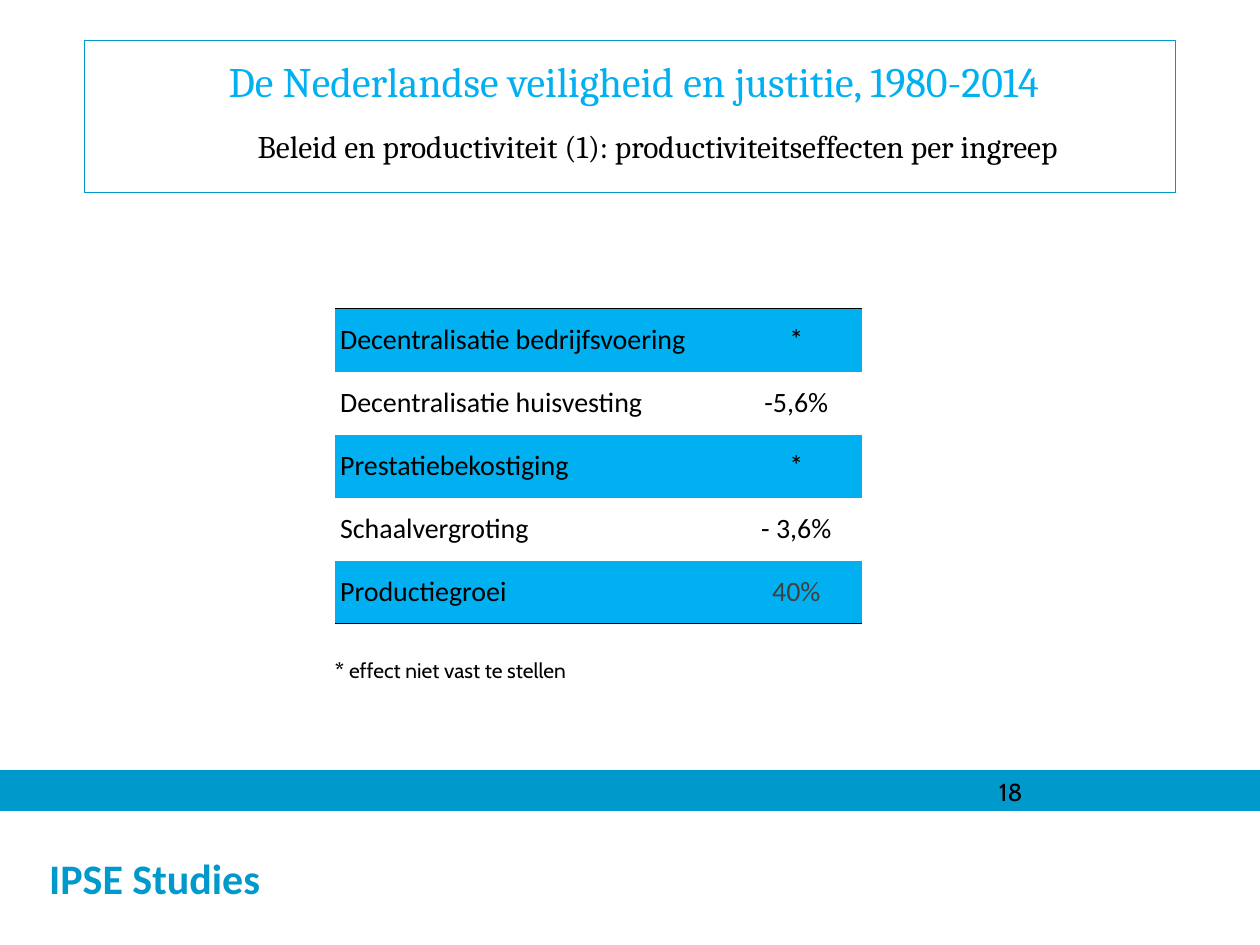
"""Build the slide on productivity effects per policy measure."""
from dataclasses import dataclass

from lxml import etree
from pptx import Presentation
from pptx.dml.color import RGBColor
from pptx.enum.shapes import MSO_SHAPE
from pptx.enum.text import MSO_ANCHOR, MSO_AUTO_SIZE, PP_ALIGN
from pptx.oxml.ns import qn
from pptx.util import Inches, Pt

RECTANGLE = MSO_SHAPE.RECTANGLE
TOP, MIDDLE = MSO_ANCHOR.TOP, MSO_ANCHOR.MIDDLE
LEFT, CENTER = PP_ALIGN.LEFT, PP_ALIGN.CENTER
NO_AUTOFIT = MSO_AUTO_SIZE.NONE

BLACK = RGBColor(0x00, 0x00, 0x00)
WHITE = RGBColor(0xFF, 0xFF, 0xFF)
GRAY = RGBColor(0x40, 0x40, 0x40)
SKY = RGBColor(0x00, 0xB0, 0xF0)
BRAND_BLUE = RGBColor(0x00, 0x99, 0xCC)
PLAIN_TABLE_STYLE = "{2D5ABB26-0587-4C30-8999-92F81FD0307C}"


@dataclass
class Style:
    font: str
    size: float
    color: RGBColor = BLACK
    bold: bool = False


@dataclass
class Effect:
    measure: str
    value: str
    value_color: RGBColor = BLACK


@dataclass
class Heading:
    style: Style
    indent: float
    space_before: float


EFFECTS = [
    Effect("Decentralisatie bedrijfsvoering", "*"),
    Effect("Decentralisatie huisvesting", "-5,6%"),
    Effect("Prestatiebekostiging", "*"),
    Effect("Schaalvergroting", "- 3,6%"),
    Effect("Productiegroei", "40%", GRAY),
]
HEADINGS = [
    Heading(Style("Cambria", 24, SKY), 0.06, 0),
    Heading(Style("Cambria", 18), 0.44, 12),
]


def format_runs(paragraph, style: Style) -> None:
    for run in paragraph.runs:
        run.font.name = style.font
        run.font.size = Pt(style.size)
        run.font.bold = style.bold
        run.font.color.rgb = style.color


def place(shape, left: float, top: float, width: float, height: float) -> None:
    shape.left, shape.top = Inches(left), Inches(top)
    shape.width, shape.height = Inches(width), Inches(height)


def add_band(slide, left: float, top: float, width: float, height: float, color: RGBColor):
    band = slide.shapes.add_shape(
        RECTANGLE, Inches(left), Inches(top), Inches(width), Inches(height))
    band.shadow.inherit = False
    band.fill.solid()
    band.fill.fore_color.rgb = color
    band.line.fill.background()
    return band


def add_text(slide, left: float, top: float, width: float, height: float,
             text: str, style: Style):
    box = slide.shapes.add_textbox(
        Inches(left), Inches(top), Inches(width), Inches(height))
    box.text_frame.word_wrap = True
    box.text_frame.text = text
    format_runs(box.text_frame.paragraphs[0], style)
    return box


def add_footer(slide) -> None:
    footer = add_band(slide, -0.01, 6.44, 10.01, 1.06, WHITE)
    frame = footer.text_frame
    frame.text = "IPSE Studies"
    frame.word_wrap = False
    frame.vertical_anchor = MIDDLE
    frame.margin_left = Inches(0.4)
    frame.paragraphs[0].alignment = LEFT
    format_runs(frame.paragraphs[0], Style("Calibri", 24, BRAND_BLUE, True))

    stripe = add_band(slide, 0, 6.12, 10, 0.31, BRAND_BLUE)
    stripe.line.color.rgb = BRAND_BLUE
    stripe.line.width = Pt(0.75)
    add_text(slide, 7.83, 6.12, 2.08, 0.25, "18", Style("Cabin", 14))


def fill_title(title) -> None:
    place(title, 0.67, 0.32, 8.66, 1.21)
    title.line.color.rgb = BRAND_BLUE
    title.line.width = Pt(0.75)
    frame = title.text_frame
    frame.text = ("De Nederlandse veiligheid en justitie, 1980-2014\n"
                  "Beleid en productiviteit (1): productiviteitseffecten per ingreep")
    frame.auto_size = NO_AUTOFIT
    frame.vertical_anchor = TOP
    frame.margin_top = Inches(0.12)
    for paragraph, heading in zip(frame.paragraphs, HEADINGS):
        paragraph.alignment = CENTER
        paragraph.space_before = Pt(heading.space_before)
        paragraph._p.get_or_add_pPr().set("marL", str(Inches(heading.indent)))
        format_runs(paragraph, heading.style)


def add_border(cell, side: str) -> None:
    border = etree.Element(qn(f"a:{side}"), w=str(Pt(1)))
    fill = etree.SubElement(border, qn("a:solidFill"))
    etree.SubElement(fill, qn("a:srgbClr"), val=str(BLACK))
    cell._tc.get_or_add_tcPr().insert(0, border)


def fill_cell(cell, text: str, align: PP_ALIGN, color: RGBColor, shaded: bool) -> None:
    cell.text_frame.text = text
    cell.vertical_anchor = MIDDLE
    cell.margin_left = cell.margin_right = Inches(0.04)
    cell.margin_top = cell.margin_bottom = 0
    paragraph = cell.text_frame.paragraphs[0]
    paragraph.alignment = align
    format_runs(paragraph, Style("Calibri", 16, color))
    if shaded:
        cell.fill.solid()
        cell.fill.fore_color.rgb = SKY
    else:
        cell.fill.background()


def add_effects_table(slide) -> None:
    table = slide.shapes.add_table(
        len(EFFECTS), 2, Inches(2.66), Inches(2.45),
        Inches(4.18), Inches(0.5 * len(EFFECTS))).table
    table.first_row = table.horz_banding = False
    table._tbl.tblPr.find(qn("a:tableStyleId")).text = PLAIN_TABLE_STYLE
    for column, width in zip(table.columns, (3.14, 1.04)):
        column.width = Inches(width)
    for row, effect in enumerate(EFFECTS):
        shaded = row % 2 == 0
        fill_cell(table.cell(row, 0), effect.measure, LEFT, BLACK, shaded)
        fill_cell(table.cell(row, 1), effect.value, CENTER, effect.value_color, shaded)
    for column in range(2):
        add_border(table.cell(0, column), "lnT")
        add_border(table.cell(len(EFFECTS) - 1, column), "lnB")


def main() -> None:
    presentation = Presentation()
    presentation.slide_width = Inches(10)
    presentation.slide_height = Inches(7.5)
    slide = presentation.slides.add_slide(presentation.slide_layouts[5])
    add_footer(slide)
    note = add_text(slide, 2.56, 5.17, 2.49, 0.3, "*", Style("Cabin", 12, bold=True))
    explanation = note.text_frame.paragraphs[0].add_run()
    explanation.text = " effect niet vast te stellen"
    explanation.font.name = "Cabin"
    explanation.font.size = Pt(12)
    explanation.font.color.rgb = BLACK
    fill_title(slide.shapes.title)
    add_effects_table(slide)
    presentation.save("out.pptx")


if __name__ == "__main__":
    main()
